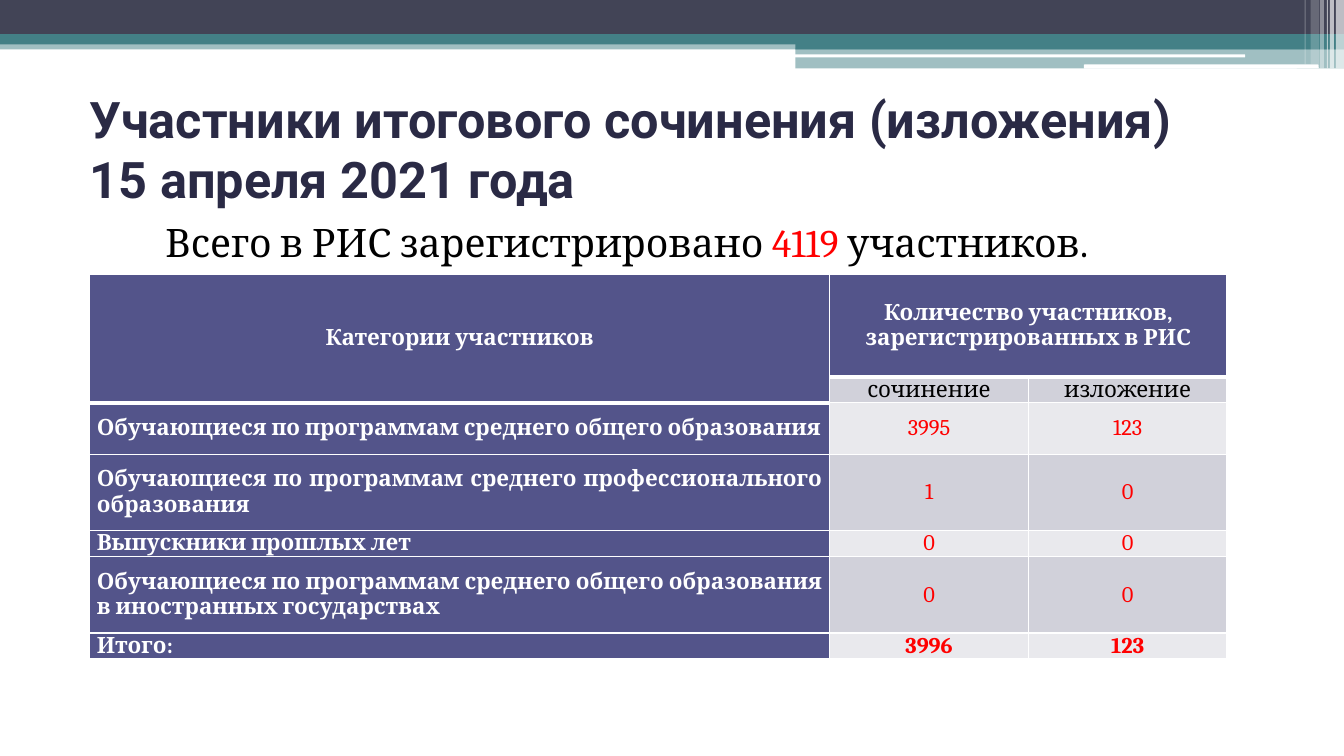
"""Build a slide with the table of participants in the final essay."""
from typing import NamedTuple

from lxml.etree import SubElement
from pptx import Presentation
from pptx.dml.color import RGBColor as Rgb
from pptx.enum.shapes import MSO_SHAPE as Kind
from pptx.enum.text import MSO_ANCHOR as Anchor, MSO_AUTO_SIZE as Fit, PP_ALIGN as Align
from pptx.oxml.ns import qn
from pptx.util import Inches, Pt

WHITE = Rgb(0xFF, 0xFF, 0xFF)
BLACK = Rgb(0, 0, 0)
RED = Rgb(0xFF, 0, 0)
NAVY = Rgb(0x2A, 0x2A, 0x45)
SLATE = Rgb(0x42, 0x44, 0x56)
TEAL = Rgb(0x43, 0x80, 0x86)
PURPLE = Rgb(0x53, 0x54, 0x8A)
GREY = Rgb(0xD1, 0xD1, 0xDA)
PALE = Rgb(0xE9, 0xE9, 0xED)


class Bar(NamedTuple):
    left: float
    top: float
    width: float
    height: float
    color: Rgb
    alpha: int = 100
    kind: Kind = Kind.RECTANGLE


class Row(NamedTuple):
    height: float
    texts: tuple[str, str, str]


BARS = (
    Bar(0, 0.4, 13.33, 0.09, TEAL, 50),
    Bar(0, 0, 13.33, 0.34, SLATE),
    Bar(0, 0.34, 13.33, 0.1, TEAL),
    Bar(7.89, 0.39, 5.44, 0.1, TEAL),
    Bar(7.89, 0.48, 5.44, 0.2, TEAL, 50),
    Bar(7.88, 0.54, 4.47, 0.03, WHITE, kind=Kind.ROUNDED_RECTANGLE),
    Bar(10.75, 0.64, 2.33, 0.04, WHITE, kind=Kind.ROUNDED_RECTANGLE),
    Bar(13.25, 0, 0.08, 0.68, WHITE, 65),
    Bar(13.19, 0, 0.04, 0.68, WHITE, 65),
    Bar(13.16, 0, 0.01, 0.68, WHITE, 60),
    Bar(13.09, 0, 0.04, 0.68, WHITE, 40),
    Bar(13, 0, 0.08, 0.64, WHITE, 20),
    Bar(12.94, 0, 0.01, 0.64, WHITE, 30),
)
ROWS = (
    Row(1.02, ("Категории участников", "Количество участников, зарегистрированных в РИС", "")),
    Row(0.25, ("", "сочинение", "изложение")),
    Row(0.51, ("Обучающиеся по программам среднего общего образования", "3995", "123")),
    Row(0.76, ("Обучающиеся по программам среднего профессионального образования", "1", "0")),
    Row(0.25, ("Выпускники прошлых лет", "0", "0")),
    Row(0.76, ("Обучающиеся по программам среднего общего образования в иностранных государствах",
               "0", "0")),
    Row(0.25, ("Итого: ", "3996", "123")),
)
WIDTHS = (7.34, 1.97, 1.97)
HEAD_ENDS = (1, 0, 0)


def write(frame, *runs: tuple[str, Rgb], font: str = "Cambria", size: float = 16,
          bold: bool = False, align: Align = Align.LEFT, before: float = 0) -> None:
    par = frame.paragraphs[0]
    par.alignment = align
    par.space_before = Pt(before)
    for text, color in runs:
        for i, line in enumerate(text.split("\n")):
            if i:
                par.add_line_break()
            run = par.add_run()
            run.text = line
            run.font.name = font
            run.font.size = Pt(size)
            run.font.bold = bold
            run.font.color.rgb = color


def place(shape, left: float, top: float, width: float, height: float) -> None:
    shape.left, shape.top = Inches(left), Inches(top)
    shape.width, shape.height = Inches(width), Inches(height)
    shape.text_frame.word_wrap = True
    shape.text_frame.auto_size = Fit.NONE


def draw_bar(slide, bar: Bar) -> None:
    shape = slide.shapes.add_shape(bar.kind, Inches(bar.left), Inches(bar.top),
                                   Inches(bar.width), Inches(bar.height))
    shape.shadow.inherit = False
    shape.line.fill.background()
    shape.fill.solid()
    shape.fill.fore_color.rgb = bar.color
    if bar.alpha < 100:
        tint = shape.fill._xPr.find(".//" + qn("a:srgbClr"))
        SubElement(tint, qn("a:alpha"), val=str(bar.alpha * 1000))


def edge(cell, side: str, width: float) -> None:
    line = SubElement(cell._tc.get_or_add_tcPr(), qn("a:ln" + side), w=str(Pt(width)))
    fill = SubElement(line, qn("a:solidFill"))
    SubElement(fill, qn("a:srgbClr"), val=str(WHITE))


def style_cell(cell, row: int, col: int) -> None:
    end = HEAD_ENDS[col]
    head = row <= end
    solid = head or col == 0
    cell.margin_left = cell.margin_right = Inches(0.07)
    cell.margin_top = cell.margin_bottom = 0
    last = row == len(ROWS) - 1
    cell.vertical_anchor = Anchor.TOP if last and col == 0 else Anchor.MIDDLE
    edge(cell, "L", 1)
    edge(cell, "R", 1)
    edge(cell, "T", 3 if row == end + 1 else 1)
    edge(cell, "B", 3 if row == end else 1)
    cell.fill.solid()
    cell.fill.fore_color.rgb = PURPLE if solid else GREY if row % 2 else PALE
    text = ROWS[row].texts[col]
    if text:
        color = WHITE if solid else BLACK if row == 1 else RED
        write(cell.text_frame, (text, color), bold=solid or last,
              align=Align.JUSTIFY if col == 0 and not head else Align.CENTER)


def draw_table(slide) -> None:
    frame = slide.shapes.add_table(len(ROWS), len(WIDTHS), Inches(0.89), Inches(2.72),
                                   Inches(sum(WIDTHS)), Inches(sum(r.height for r in ROWS)))
    table = frame.table
    table.first_row = table.horz_banding = False
    for col, width in enumerate(WIDTHS):
        table.columns[col].width = Inches(width)
    table.cell(0, 0).merge(table.cell(1, 0))
    table.cell(0, 1).merge(table.cell(0, 2))
    for row, item in enumerate(ROWS):
        table.rows[row].height = Inches(item.height)
        for col in range(len(WIDTHS)):
            style_cell(table.cell(row, col), row, col)


def main() -> None:
    deck = Presentation()
    deck.slide_width, deck.slide_height = Inches(13.33), Inches(7.5)
    slide = deck.slides.add_slide(deck.slide_layouts[1])
    for bar in BARS:
        draw_bar(slide, bar)

    title, body = slide.placeholders
    place(title, 0.79, 1.07, 11.73, 0.8)
    title.text_frame.vertical_anchor = Anchor.MIDDLE
    write(title.text_frame, ("Участники итогового сочинения (изложения) \n15 апреля 2021 года", NAVY),
          font="Roboto", size=36, bold=True)

    place(body, 1.42, 2.12, 10.5, 0.71)
    write(body.text_frame, ("Всего в РИС зарегистрировано ", BLACK), ("4119 ", RED),
          ("участников.", BLACK), size=28, before=3)
    props = body.text_frame.paragraphs[0]._p.get_or_add_pPr()
    props.set("marL", str(Inches(0.4)))
    props.set("indent", str(Inches(-0.28)))
    SubElement(props, qn("a:buNone"))

    draw_table(slide)
    deck.save("out.pptx")


if __name__ == "__main__":
    main()
